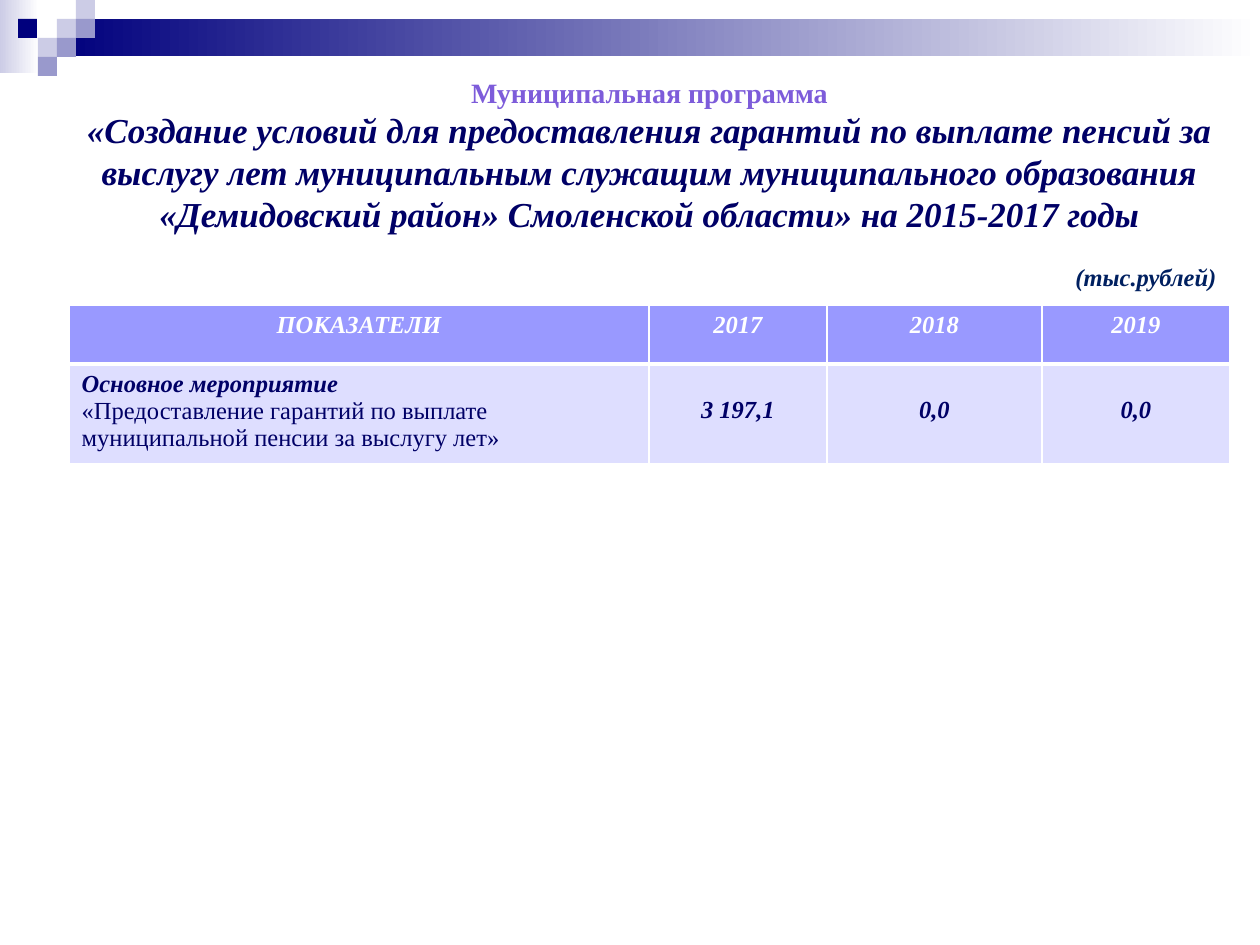
import pptx
import pptx.util
import pptx.dml.color
import pptx.enum.shapes
import pptx.enum.text
import pptx.oxml
import pptx.oxml.ns

PX = 914400 // 126
FONT = "Times New Roman"
COLORS = {
    "navy": "00007D", "pale": "CCCCE6", "mid": "9999CC", "white": "FFFFFF",
    "violet": "7D5CDA", "ink": "000066", "unit": "002060",
    "header": "9999FF", "body": "DEDEFF",
}
TITLE = [
    ("Муниципальная программа", 16, "violet", False),
    ("«Создание условий для предоставления гарантий по выплате пенсий за "
     "выслугу лет муниципальным служащим муниципального образования "
     "«Демидовский район» Смоленской области» на 2015-2017 годы", 20, "ink", True),
]
UNIT = "(тыс.рублей)"
ROWS = [
    ["ПОКАЗАТЕЛИ", "2017", "2018", "2019"],
    ["Основное мероприятие\n«Предоставление гарантий по выплате муниципальной пенсии за выслугу лет»",
     "3 197,1", "0,0", "0,0"],
]
COLUMN_WIDTHS = [580, 178, 215, 188]
ROW_HEIGHTS = [59, 100]
BANDS = [(0, 0, 39, 73, "pale"), (57, 19, 1203, 37, "navy")]
SQUARE = 19
SQUARES = [
    (57, 19, "pale"), (76, 0, "pale"), (76, 19, "mid"), (38, 38, "pale"),
    (18, 19, "navy"), (57, 38, "mid"), (38, 57, "mid"),
]
ALIGN = pptx.enum.text.PP_ALIGN


def color(name):
    return pptx.dml.color.RGBColor.from_string(COLORS[name])


def px(*values):
    return [value * PX for value in values]


def style(para, size, name, bold=True, italic=True, align=ALIGN.CENTER):
    para.alignment = align
    for span in para.runs:
        span.font.name = FONT
        span.font.size = pptx.util.Pt(size)
        span.font.bold = bold
        span.font.italic = italic
        span.font.color.rgb = color(name)


def add_rectangle(page, left, top, width, height, name, fade=False):
    box = page.shapes.add_shape(pptx.enum.shapes.MSO_SHAPE.RECTANGLE, *px(left, top, width, height))
    box.shadow.inherit = False
    box.line.fill.background()
    if fade:
        box.fill.gradient()
        box.fill.gradient_angle = 0
        for stop, position, shade in zip(box.fill.gradient_stops, (0, 1), (name, "white")):
            stop.position = position
            stop.color.rgb = color(shade)
    else:
        box.fill.solid()
        box.fill.fore_color.rgb = color(name)


def add_borders(cell, bottom):
    properties = cell._tc.get_or_add_tcPr()
    for index, (side, width) in enumerate([("L", 1), ("R", 1), ("T", 1), ("B", bottom)]):
        properties.insert(index, pptx.oxml.parse_xml(
            f'<a:ln{side} {pptx.oxml.ns.nsdecls("a")} w="{width * 12700}"><a:solidFill>'
            f'<a:srgbClr val="{COLORS["white"]}"/></a:solidFill></a:ln{side}>'))


def add_title(page):
    title = page.shapes.title
    title.left, title.top, title.width, title.height = px(39, 69, 1221, 174)
    frame = title.text_frame
    frame.word_wrap = True
    frame.auto_size = pptx.enum.text.MSO_AUTO_SIZE.NONE
    frame.vertical_anchor = pptx.enum.text.MSO_ANCHOR.TOP
    frame.text = "\n".join(text for text, *_ in TITLE)
    for para, (_, size, name, italic) in zip(frame.paragraphs, TITLE):
        style(para, size, name, italic=italic)


def add_unit(page):
    box = page.shapes.add_textbox(*px(1063, 256, 168, 43))
    box.text_frame.word_wrap = False
    box.text_frame.text = UNIT
    style(box.text_frame.paragraphs[0], 14, "unit", align=ALIGN.LEFT)


def add_indicators(page):
    table = page.shapes.add_table(
        len(ROWS), len(COLUMN_WIDTHS),
        *px(69, 305, sum(COLUMN_WIDTHS), sum(ROW_HEIGHTS))).table
    for column, width in zip(table.columns, COLUMN_WIDTHS):
        column.width = width * PX
    for row, height in zip(table.rows, ROW_HEIGHTS):
        row.height = height * PX
    for r, texts in enumerate(ROWS):
        for c, text in enumerate(texts):
            cell = table.cell(r, c)
            cell.text = text
            cell.fill.solid()
            cell.fill.fore_color.rgb = color("body" if r else "header")
            add_borders(cell, 1 if r else 3)
            if r and c:
                cell.margin_top = 33 * PX
            for index, para in enumerate(cell.text_frame.paragraphs):
                strong = index == 0
                style(para, 14, "ink" if r else "white", strong, strong,
                      ALIGN.LEFT if r and not c else ALIGN.CENTER)


def main():
    deck = pptx.Presentation()
    deck.slide_width, deck.slide_height = px(1260, 945)
    page = deck.slides.add_slide(deck.slide_layouts[5])
    for band in BANDS:
        add_rectangle(page, *band, fade=True)
    for left, top, name in SQUARES:
        add_rectangle(page, left, top, SQUARE, SQUARE, name)
    add_title(page)
    add_indicators(page)
    add_unit(page)
    deck.save("out.pptx")


if __name__ == "__main__":
    main()
